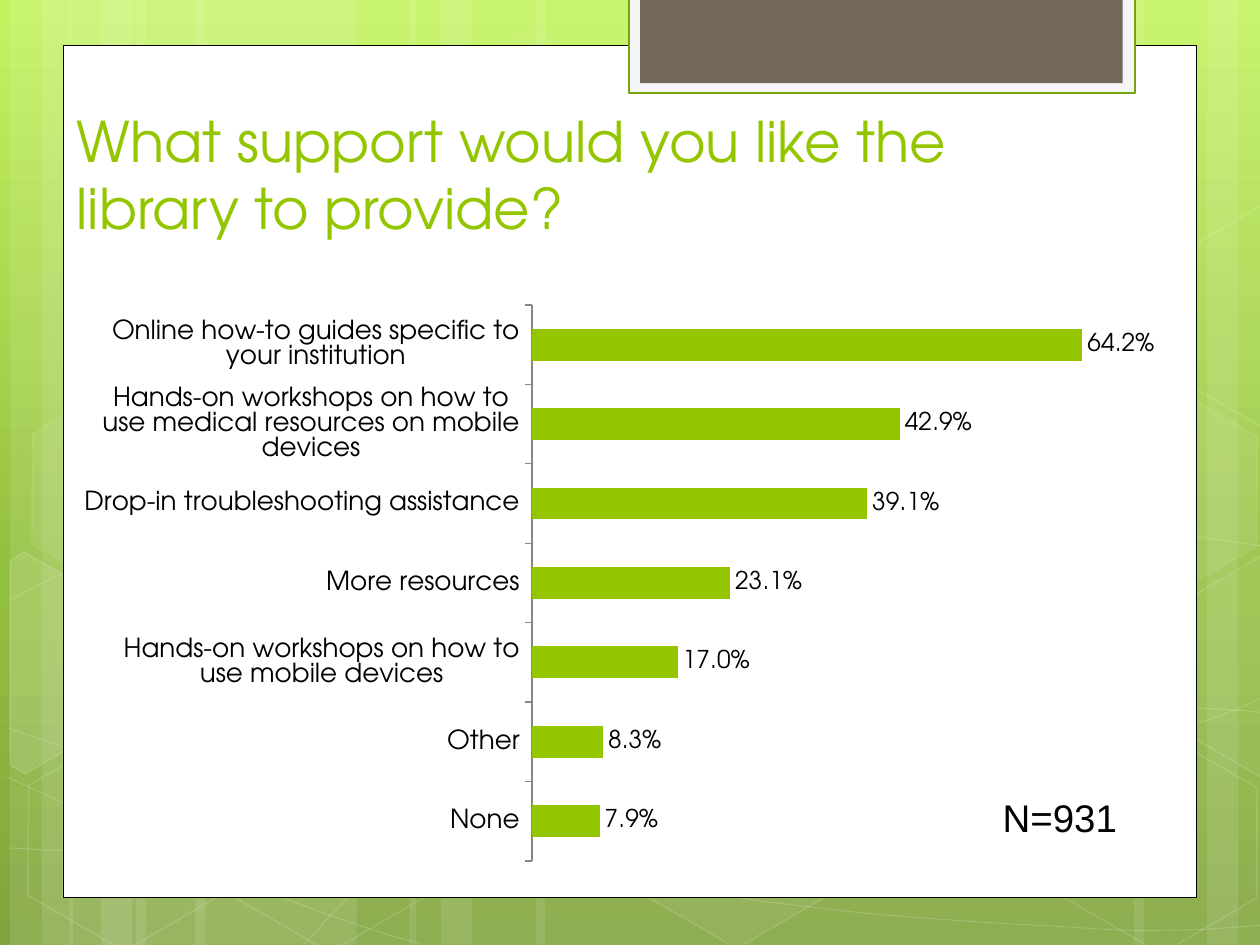
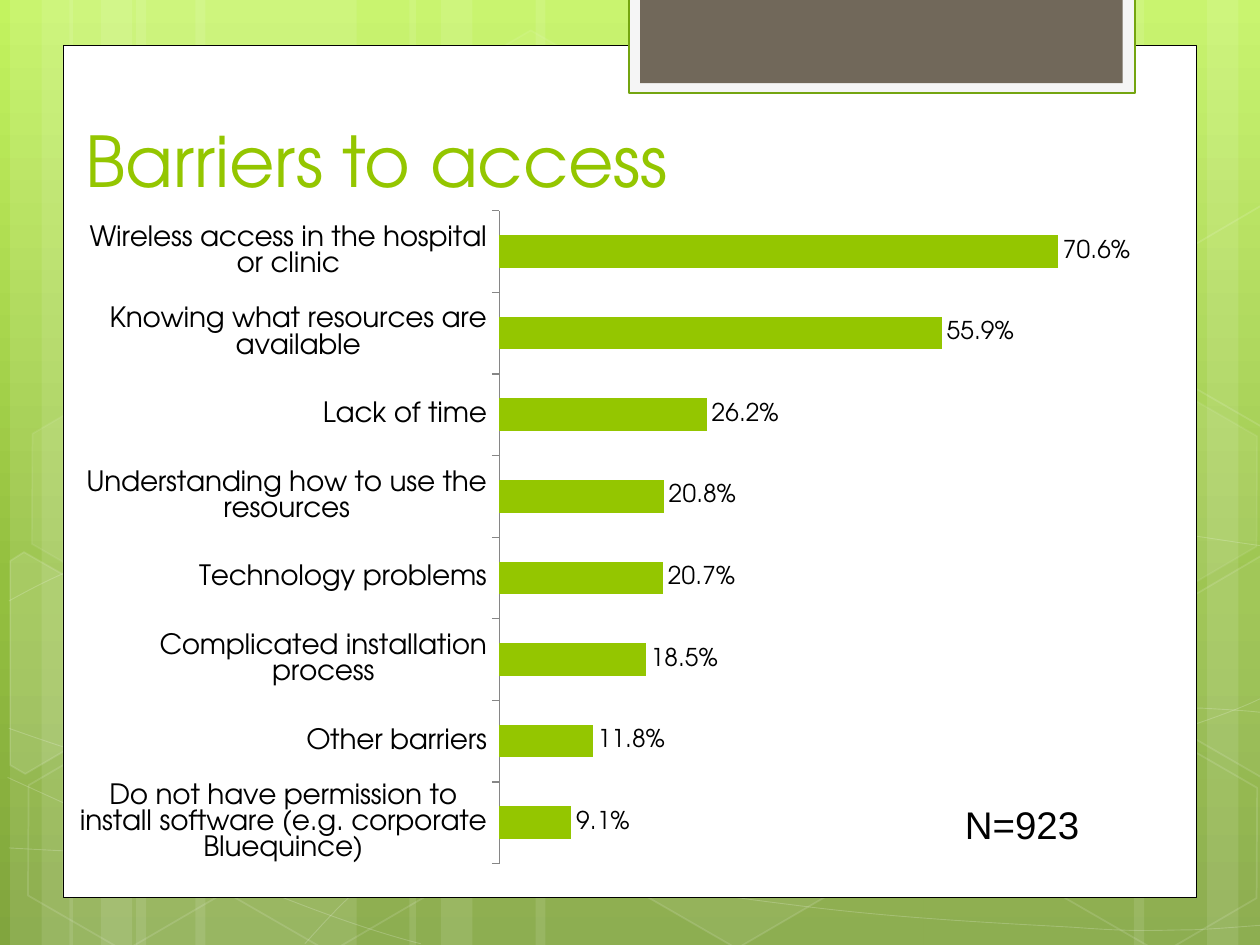
"""Builds two survey slides, each with a bar chart on a shared green backdrop."""
from copy import deepcopy
from math import cos, radians, sin

from lxml.etree import SubElement
from pptx import Presentation
from pptx.chart.data import CategoryChartData
from pptx.dml.color import RGBColor
from pptx.enum.chart import XL_CHART_TYPE, XL_LABEL_POSITION, XL_TICK_LABEL_POSITION, XL_TICK_MARK
from pptx.enum.shapes import MSO_SHAPE
from pptx.enum.text import MSO_ANCHOR
from pptx.oxml import parse_xml
from pptx.oxml.ns import nsdecls, qn
from pptx.util import Inches, Pt

COLORS = {
    "sky": "C3F35F", "leaf": "93BF3F", "moss": "81A53E", "white": "FFFFFF",
    "black": "000000", "tab": "F5F5F5", "tab_edge": "74A510", "taupe": "71685A",
    "lime": "94C600", "axis": "868686",
}
TITLE_FONT = "TeX Gyre Adventor"
NOTE_FONT = "Arial"
SKY_STOPS = [(0, "sky"), (0.62, "leaf"), (1, "moss")]
TILT = 30

STRIPES = [
    (1.08, 1.75), (0.08, 0.5), (0.33, 0.83), (1.55, 1.75), (0.55, 0.5), (0.8, 0.83),
    (7.33, 1.75), (9.58, 0.5), (9, 0.83), (4.25, 3.08), (3.25, 0.5), (3.5, 0.83),
]
CURVES = [
    [(0.07, 6.73), (0.61, 6.76), (1.15, 6.79), (1.9, 6.78), (2.65, 6.77), (3.58, 6.75),
     (4.58, 6.65), (5.58, 6.55), (7, 6.36), (7.92, 6.17), (8.83, 5.98), (9.77, 5.68),
     (10.07, 5.51)],
    [(0.07, 4.77), (0.36, 4.61), (0.65, 4.46), (1.21, 4.31), (1.78, 4.16), (2.59, 3.94),
     (3.47, 3.87), (4.36, 3.8), (5.44, 3.79), (6.54, 3.87), (7.64, 3.95), (9.47, 4.26),
     (10.07, 4.34)],
    [(0.06, 6.17), (1.27, 6.72), (2.47, 7.27), (3.34, 7.49)],
    [(0.07, 5.78), (0.38, 5.89), (0.7, 6), (1.28, 6.16), (1.86, 6.31), (2.73, 6.56),
     (3.57, 6.73), (4.4, 6.9), (5.45, 7.08), (6.28, 7.18), (7.11, 7.29), (8, 7.33),
     (8.53, 7.36), (9.05, 7.4), (9.19, 7.38), (9.45, 7.38), (9.71, 7.37), (9.89, 7.35),
     (10.07, 7.34)],
    [(2.42, 7.49), (2.6, 7.29), (2.78, 7.09), (3.02, 6.91), (3.26, 6.73), (3.6, 6.53),
     (3.88, 6.39), (4.16, 6.25), (4.33, 6.19), (4.7, 6.09), (5.06, 5.99), (5.73, 5.85),
     (6.08, 5.78), (6.44, 5.71), (6.49, 5.71), (6.8, 5.69), (7.11, 5.66), (7.6, 5.63),
     (7.94, 5.62), (8.29, 5.61), (8.86, 5.62), (8.86, 5.62), (8.86, 5.62), (9.53, 5.62),
     (9.53, 5.62), (9.71, 5.63), (9.88, 5.64), (9.97, 5.65), (10.06, 5.66), (10.03, 5.65),
     (10.06, 5.66)],
]
LEFT_CUT = [(0.08, 4.45), (0.19, 4.38), (0.96, 4.82), (0.95, 5.7), (0.2, 6.14), (0.08, 6.07)]
LOWER_CUT = [(9.26, 4.85), (10.01, 4.41), (10.09, 4.46), (10.09, 6.13), (10.02, 6.17), (9.26, 5.73)]
UPPER_CUT = [(9.26, 2.07), (10.01, 1.63), (10.1, 1.68), (10.09, 3.35), (10.02, 3.39), (9.26, 2.95)]
HEXAGONS = [
    (3.34, 0.36, 1.75, 4, 8, None), (4.97, 5.89, 1.75, 6, 12, None),
    (-0.33, 4.59, 1.38, 10, 12, LEFT_CUT), (0.11, 5.91, 1.75, 0, 12, None),
    (0.14, 3.12, 1.75, 7, 8, None), (1.74, 5.92, 1.75, 0, 12, None),
    (7.53, 4.53, 1.75, 10, 12, None), (8.34, 5.93, 1.75, 0, 12, None),
    (8.34, 3.14, 1.75, 7, 8, None), (9.17, 4.44, 1.36, 4, 12, LOWER_CUT),
    (9.17, 1.65, 1.36, 0, 12, UPPER_CUT),
]
HEXAGON_HEIGHT = 1.52
PANELS = [
    (0.5, 0.36, 9, 6.76, "white", "black", 0.5),
    (4.99, -0.02, 4.02, 0.76, "tab", "tab_edge", 1.25),
    (5.08, -0.02, 3.83, 0.68, "taupe", None, 0),
]

SLIDES = [
    {
        "title": "What support would you like the library to provide?",
        "title_size": 32, "title_at": (0.51, 0.3, 8.49, 1.66),
        "note": "N=931", "note_at": (7.86, 6.25, 1.39, 0.47),
        "chart_at": (0.67, 2.25, 8.94, 4.75), "plot": (0.396, 0.036, 0.534, 0.929),
        "axis_size": 15, "axis_max": 0.7,
        "answers": [
            ("None", 0.079),
            ("Other", 0.083),
            ("Hands-on workshops on how to use mobile devices", 0.17),
            ("More resources", 0.231),
            ("Drop-in troubleshooting assistance", 0.391),
            ("Hands-on workshops on how to use medical resources on mobile devices", 0.429),
            ("Online how-to guides specific to your institution", 0.642),
        ],
    },
    {
        "title": "Barriers to access",
        "title_size": 40, "title_at": (0.58, 0.3, 8.42, 1.35),
        "note": "N=923", "note_at": (7.56, 6.31, 1.32, 0.47),
        "chart_at": (0.58, 1.49, 8.74, 5.56), "plot": (0.387, 0.033, 0.575, 0.932),
        "axis_size": 16, "axis_max": 0.8,
        "answers": [
            ("Do not have permission to install software (e.g. corporate Bluequince)", 0.091),
            ("Other barriers", 0.118),
            ("Complicated installation process", 0.185),
            ("Technology problems", 0.207),
            ("Understanding how to use the resources", 0.208),
            ("Lack of time", 0.262),
            ("Knowing what resources are available", 0.559),
            ("Wireless access in the hospital or clinic", 0.706),
        ],
    },
]


def paint(shape, fill=None, fill_alpha=100, line=None, line_width=1, line_alpha=100):
    """Sets fill and outline; alphas are percentages."""
    shape.shadow.inherit = False
    shape.line.width = Pt(line_width)
    properties = shape.element.spPr
    for target, parent, color, alpha in (
            (shape.fill, properties, fill, fill_alpha),
            (shape.line.fill, properties.find(qn("a:ln")), line, line_alpha)):
        if color is None or alpha == 0:
            target.background()
            continue
        target.solid()
        target.fore_color.rgb = RGBColor.from_string(COLORS[color])
        if alpha < 100:
            tint = parent.find(qn("a:solidFill")).find(qn("a:srgbClr"))
            SubElement(tint, qn("a:alpha")).set("val", str(alpha * 1000))


def add_text(page, at, text, font, size, color, anchor):
    """Adds a wrapped text box holding one run."""
    box = page.shapes.add_textbox(*map(Inches, at))
    box.text_frame.word_wrap = True
    box.text_frame.vertical_anchor = anchor
    span = box.text_frame.paragraphs[0].add_run()
    span.text = text
    span.font.name = font
    span.font.size = Pt(size)
    span.font.color.rgb = RGBColor.from_string(COLORS[color])


deck = Presentation()
deck.slide_width = Inches(10)
deck.slide_height = Inches(7.5)

for content in SLIDES:
    page = deck.slides.add_slide(deck.slide_layouts[6])
    sky = page.background.fill
    sky.gradient()
    sky.gradient_angle = 270
    stop_list = page.element.find(".//" + qn("a:gsLst"))
    stop_list.append(deepcopy(stop_list[0]))
    for stop, (position, color) in zip(sky.gradient_stops, SKY_STOPS):
        stop.position = position
        stop.color.rgb = RGBColor.from_string(COLORS[color])

    for left, width in STRIPES:
        stripe = page.shapes.add_shape(
            MSO_SHAPE.RECTANGLE, Inches(left), 0, Inches(width), deck.slide_height)
        paint(stripe, "white", 10)

    for points in CURVES:
        points = [[Inches(x), Inches(y)] for x, y in points]
        builder = page.shapes.build_freeform(*points[0])
        builder.add_line_segments(points[1:], close=False)
        curve = builder.convert_to_shape()
        outline = curve.element.find(".//" + qn("a:path"))
        segments = outline.findall(qn("a:lnTo"))
        for start in range(0, len(segments), 3):
            bend = SubElement(outline, qn("a:cubicBezTo"))
            for segment in segments[start:start + 3]:
                bend.append(segment[0])
                outline.remove(segment)
        paint(curve, line="white", line_width=0.5, line_alpha=20)

    for left, top, width, fill_alpha, line_alpha, corners in HEXAGONS:
        if corners:
            middle_x, middle_y = left + width / 2, top + HEXAGON_HEIGHT / 2
            c, s = cos(radians(TILT)), sin(radians(TILT))
            upright = [
                [Inches(middle_x + (x - middle_x) * c + (y - middle_y) * s),
                 Inches(middle_y - (x - middle_x) * s + (y - middle_y) * c)]
                for x, y in corners]
            builder = page.shapes.build_freeform(*upright[0])
            builder.add_line_segments(upright[1:], close=True)
            hexagon = builder.convert_to_shape()
        else:
            hexagon = page.shapes.add_shape(
                MSO_SHAPE.HEXAGON, *map(Inches, (left, top, width, HEXAGON_HEIGHT)))
            hexagon.adjustments[0] = 0.285
        hexagon.rotation = TILT
        paint(hexagon, "white", fill_alpha, "white", 1, line_alpha)

    for left, top, width, height, fill, line, line_width in PANELS:
        panel = page.shapes.add_shape(
            MSO_SHAPE.RECTANGLE, Inches(left), Inches(top), Inches(width), Inches(height))
        paint(panel, fill, line=line, line_width=line_width)

    add_text(page, content["title_at"], content["title"], TITLE_FONT,
             content["title_size"], "lime", MSO_ANCHOR.BOTTOM)
    add_text(page, content["note_at"], content["note"], NOTE_FONT, 22, "black", MSO_ANCHOR.TOP)

    data = CategoryChartData(number_format="0.0%")
    data.categories = [answer for answer, share in content["answers"]]
    data.add_series("Series 1", [share for answer, share in content["answers"]])
    chart = page.shapes.add_chart(
        XL_CHART_TYPE.BAR_CLUSTERED, *map(Inches, content["chart_at"]), data).chart
    chart.has_legend = False
    chart.has_title = False
    chart.font.name = TITLE_FONT
    chart.font.size = Pt(18)
    chart.font.color.rgb = RGBColor.from_string(COLORS["black"])

    answer_axis = chart.category_axis
    answer_axis.major_tick_mark = XL_TICK_MARK.OUTSIDE
    answer_axis.minor_tick_mark = XL_TICK_MARK.NONE
    answer_axis.tick_label_position = XL_TICK_LABEL_POSITION.NEXT_TO_AXIS
    answer_axis.tick_labels.font.size = Pt(content["axis_size"])
    answer_axis.format.line.width = Pt(0.75)
    answer_axis.format.line.color.rgb = RGBColor.from_string(COLORS["axis"])
    share_axis = chart.value_axis
    share_axis.minimum_scale = 0
    share_axis.maximum_scale = content["axis_max"]
    share_axis.has_major_gridlines = False
    share_axis.visible = False

    plot = chart.plots[0]
    plot.gap_width = 150
    plot.vary_by_categories = False
    bars = plot.series[0]
    bars.format.fill.solid()
    bars.format.fill.fore_color.rgb = RGBColor.from_string(COLORS["lime"])
    labels = bars.data_labels
    labels.show_value = True
    labels.number_format = "0.0%"
    labels.number_format_is_linked = False
    labels.position = XL_LABEL_POSITION.OUTSIDE_END
    labels.font.size = Pt(14)

    plot_area = chart.element.find(".//" + qn("c:plotArea"))
    for old_layout in plot_area.findall(qn("c:layout")):
        plot_area.remove(old_layout)
    rules = [("layoutTarget", "inner"), ("xMode", "edge"), ("yMode", "edge")]
    rules += zip("xywh", content["plot"])
    marks = "".join(f'<c:{name} val="{value}"/>' for name, value in rules)
    plot_area.insert(0, parse_xml(
        f'<c:layout {nsdecls("c")}><c:manualLayout>{marks}</c:manualLayout></c:layout>'))

deck.save("out.pptx")
